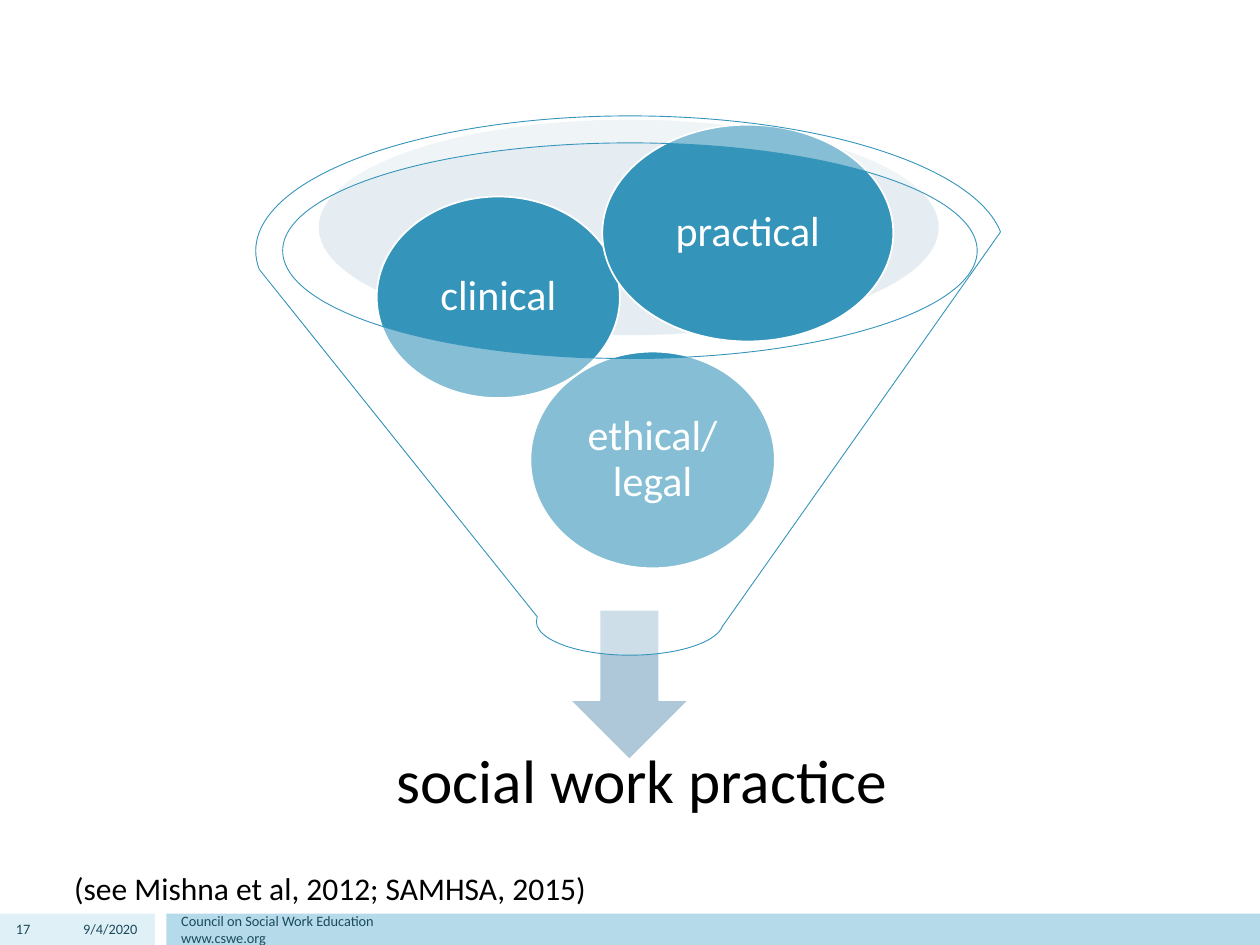
from dataclasses import dataclass
from typing import Optional

from lxml.etree import SubElement
from pptx import Presentation
from pptx.dml.color import RGBColor
from pptx.enum.shapes import MSO_SHAPE as Shape
from pptx.enum.text import MSO_ANCHOR as Anchor, PP_ALIGN as Align
from pptx.oxml.ns import qn
from pptx.util import Inches, Pt


@dataclass(frozen=True)
class Theme:
    font: str = "Calibri"
    white: str = "FFFFFF"
    black: str = "000000"
    accent: str = "3494BA"
    rim: str = "BFD2E0"
    arrow: str = "AEC8D9"
    footer_light: str = "DFF0F6"
    footer_dark: str = "B5DBEA"
    footer_text: str = "1A4A5D"
    result_size: float = 35
    factor_size: float = 24
    source_size: float = 18
    footer_size: float = 8.2


@dataclass(frozen=True)
class Area:
    left: float
    top: float
    width: float
    height: float

    def lengths(self) -> list:
        return [Inches(n) for n in (self.left, self.top, self.width, self.height)]


@dataclass(frozen=True)
class Factor:
    label: str
    area: Area


@dataclass(frozen=True)
class FooterItem:
    lines: str
    area: Area
    align: Align


THEME = Theme()
FOOTER_TOP, FOOTER_HEIGHT = 7.25, 0.25


def footer_area(left: float, width: float) -> Area:
    return Area(left, FOOTER_TOP, width, FOOTER_HEIGHT)


FOOTER_BARS = [
    (footer_area(0, 1.23), THEME.footer_light),
    (footer_area(1.32, 8.68), THEME.footer_dark),
]
FACTORS = [
    Factor("ethical/ legal", Area(4.21, 2.79, 1.94, 1.72)),
    Factor("clinical", Area(2.99, 1.56, 1.93, 1.6)),
    Factor("practical", Area(4.78, 0.99, 2.31, 1.72)),
]
FOOTER_ITEMS = [
    FooterItem("17", footer_area(0, 0.34), Align.RIGHT),
    FooterItem("9/4/2020", footer_area(0.37, 0.82), Align.RIGHT),
    FooterItem("Council on Social Work Education\vwww.cswe.org",
               footer_area(1.34, 7.5), Align.LEFT),
]


def draw_shape(page, kind: Shape, area: Area, fill: str, line: Optional[str] = None,
               line_width: float = 1, opacity: int = 100):
    shape = page.shapes.add_shape(kind, *area.lengths())
    shape.shadow.inherit = False
    shape.fill.solid()
    shape.fill.fore_color.rgb = RGBColor.from_string(fill)
    if opacity < 100:
        color = shape.fill._xPr.find(qn("a:solidFill"))[0]
        SubElement(color, qn("a:alpha"), val=str(opacity * 1000))
    if line:
        shape.line.color.rgb = RGBColor.from_string(line)
        shape.line.width = Pt(line_width)
    else:
        shape.line.fill.background()
    return shape


def write_text(box, text: str, *, size: float, color: str, align: Align = Align.LEFT,
               anchor: Anchor = Anchor.MIDDLE, inset: Optional[float] = None,
               spacing: Optional[float] = None, wrap: bool = True) -> None:
    frame = box.text_frame
    frame.word_wrap = wrap
    frame.vertical_anchor = anchor
    if inset is not None:
        frame.margin_left = frame.margin_right = Inches(inset)
        frame.margin_top = frame.margin_bottom = Inches(inset)
    para = frame.paragraphs[0]
    para.text = text
    para.alignment = align
    para.line_spacing = spacing
    for span in para.runs:
        span.font.name = THEME.font
        span.font.size = Pt(size)
        span.font.color.rgb = RGBColor.from_string(color)


def draw_text(page, area: Area, text: str, **style) -> None:
    write_text(page.shapes.add_textbox(*area.lengths()), text, **style)


def draw_funnel(page) -> None:
    draw_shape(page, Shape.OVAL, Area(2.53, 0.95, 4.92, 1.71), THEME.rim, opacity=40)
    draw_shape(page, Shape.DOWN_ARROW, Area(4.52, 4.84, 0.95, 1.19),
               THEME.arrow, THEME.white)
    draw_text(page, Area(2.81, 5.65, 4.57, 1.14), "social work practice",
              size=THEME.result_size, color=THEME.black, align=Align.CENTER,
              inset=0.27, spacing=0.9)
    for factor in FACTORS:
        oval = draw_shape(page, Shape.OVAL, factor.area, THEME.accent, THEME.white)
        write_text(oval, factor.label, size=THEME.factor_size, color=THEME.white,
                   align=Align.CENTER, inset=0.03, spacing=0.9)
    draw_shape(page, Shape.FUNNEL, Area(2.03, 0.92, 5.94, 4.28), THEME.white,
               THEME.accent, line_width=0.5, opacity=40)


def main() -> None:
    deck = Presentation()
    deck.slide_width, deck.slide_height = Inches(10), Inches(7.5)
    page = deck.slides.add_slide(deck.slide_layouts[6])
    for area, fill in FOOTER_BARS:
        draw_shape(page, Shape.RECTANGLE, area, fill)
    draw_funnel(page)
    for item in FOOTER_ITEMS:
        draw_text(page, item.area, item.lines, size=THEME.footer_size,
                  color=THEME.footer_text, align=item.align)
    draw_text(page, Area(0.49, 6.85, 4.45, 0.4), "(see Mishna et al, 2012; SAMHSA, 2015)",
              size=THEME.source_size, color=THEME.black, anchor=Anchor.TOP, wrap=False)
    deck.save("out.pptx")


if __name__ == "__main__":
    main()
